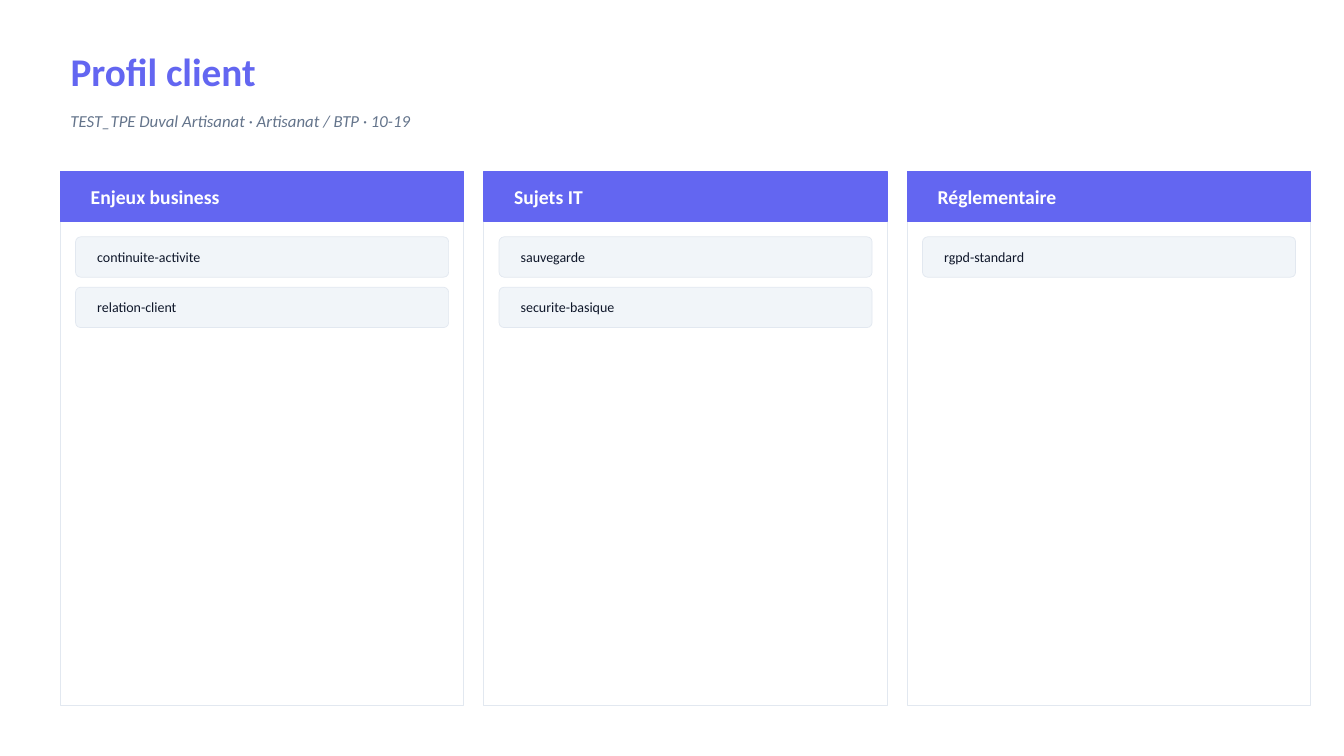
"""Build the client profile slide with its three topic columns."""
from pptx import Presentation
from pptx import util as u
from pptx.dml.color import RGBColor
from pptx.enum import shapes, text

PX = 9144
INDIGO = RGBColor(0x63, 0x66, 0xF1)
SLATE = RGBColor(0x64, 0x74, 0x8B)
INK = RGBColor(0x0F, 0x17, 0x2A)
WHITE = RGBColor(0xFF, 0xFF, 0xFF)
MIST = RGBColor(0xF1, 0xF5, 0xF9)
BORDER = RGBColor(0xE2, 0xE8, 0xF0)

LEFT, TOP = 60, 170
COLUMN_W, COLUMN_H, COLUMN_STEP = 400, 530, 420
HEADER_H = 50
CHIP_INSET, CHIP_H, CHIP_STEP = 15, 40, 50

COLUMNS = [
    ("Enjeux business", ["continuite-activite", "relation-client"]),
    ("Sujets IT", ["sauvegarde", "securite-basique"]),
    ("Réglementaire", ["rgpd-standard"]),
]


def write(shape, words, size, color, indent=10, bold=False, italic=False):
    frame = shape.text_frame
    frame.word_wrap = True
    frame.auto_size = text.MSO_AUTO_SIZE.NONE
    frame.vertical_anchor = text.MSO_ANCHOR.MIDDLE
    frame.margin_left = indent * PX
    paragraph = frame.paragraphs[0]
    paragraph.alignment = text.PP_ALIGN.LEFT
    run = paragraph.add_run()
    run.text = words
    run.font.name = "Calibri"
    run.font.size = u.Pt(size)
    run.font.bold = bold
    run.font.italic = italic
    run.font.color.rgb = color


def add_box(kind, left, top, width, height, fill, line, weight):
    box = slide.shapes.add_shape(kind, left * PX, top * PX, width * PX, height * PX)
    box.shadow.inherit = False
    box.fill.solid()
    box.fill.fore_color.rgb = fill
    box.line.color.rgb = line
    box.line.width = u.Pt(weight)
    return box


deck = Presentation()
deck.slide_width, deck.slide_height = 1333 * PX, 750 * PX
slide = deck.slides.add_slide(deck.slide_layouts[5])
slide.background.fill.solid()
slide.background.fill.fore_color.rgb = WHITE

title = slide.shapes.title
title.left, title.top, title.width, title.height = LEFT * PX, 40 * PX, 1200 * PX, 60 * PX
write(title, "Profil client", 28, INDIGO, bold=True)

client = slide.shapes.add_textbox(LEFT * PX, 100 * PX, 1200 * PX, 40 * PX)
write(client, "TEST_TPE Duval Artisanat · Artisanat / BTP · 10-19", 12, SLATE, italic=True)

RECT = shapes.MSO_SHAPE.RECTANGLE
ROUNDED = shapes.MSO_SHAPE.ROUNDED_RECTANGLE

for column, (heading, topics) in enumerate(COLUMNS):
    left = LEFT + column * COLUMN_STEP
    add_box(RECT, left, TOP, COLUMN_W, COLUMN_H, WHITE, BORDER, 0.75)
    header = add_box(RECT, left, TOP, COLUMN_W, HEADER_H, INDIGO, INDIGO, 1)
    write(header, heading, 14, WHITE, indent=30, bold=True)
    for row, topic in enumerate(topics):
        chip_top = TOP + HEADER_H + CHIP_INSET + row * CHIP_STEP
        chip = add_box(ROUNDED, left + CHIP_INSET, chip_top,
                       COLUMN_W - 2 * CHIP_INSET, CHIP_H, MIST, BORDER, 0.5)
        chip.adjustments[0] = 0.125
        write(chip, topic, 10, INK, indent=20)

deck.save("out.pptx")
